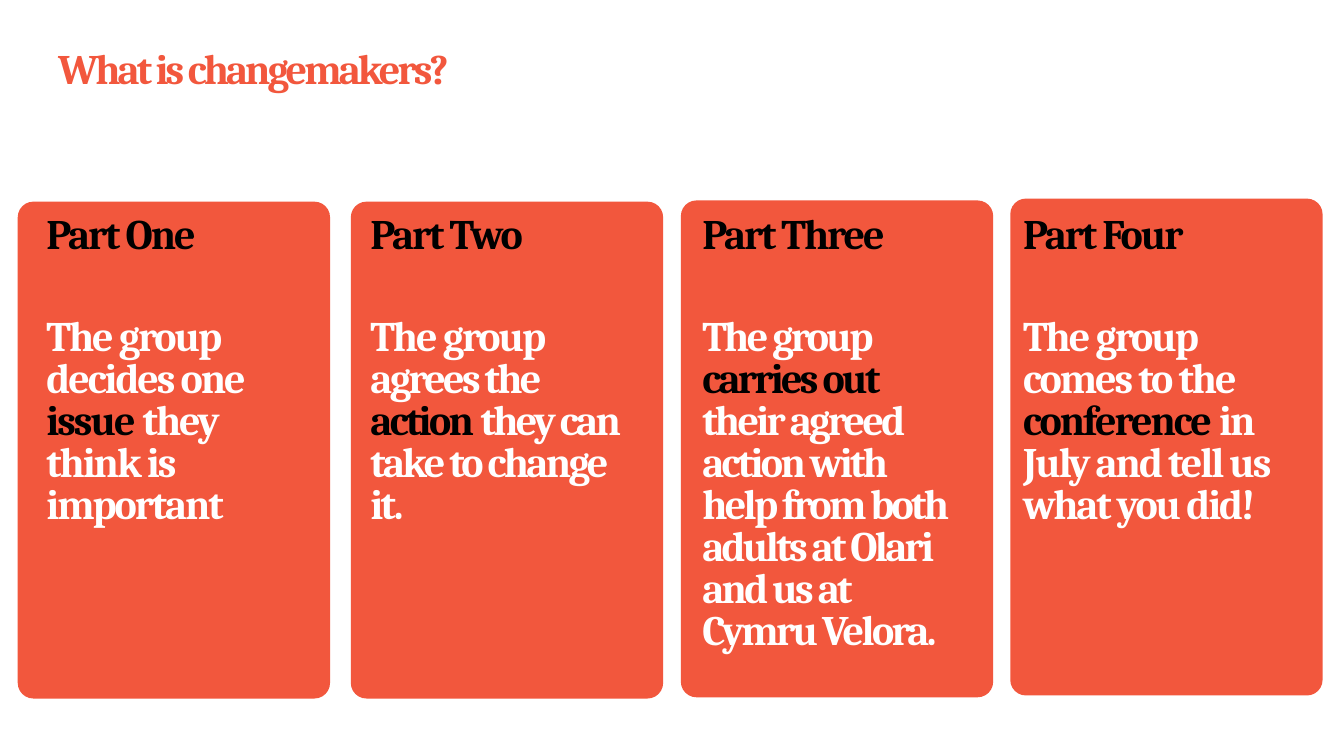
from pptx import Presentation
from pptx.dml.color import RGBColor
from pptx.enum.shapes import MSO_SHAPE
from pptx.util import Pt

PX = 9144
CORAL = RGBColor(0xF2, 0x57, 0x3D)
BLACK = RGBColor(0, 0, 0)
WHITE = RGBColor(255, 255, 255)
SIZE = Pt(49.5)
GAP = Pt(71.1)
CARD_W, CARD_H = 511, 813
TEXT_TOP, TEXT_W = 338, 418

PARTS = [
    ((29, 330), (47, 537), "Part One", [
        ("The group decides one ", WHITE, -240),
        ("issue", BLACK, -240),
        (" they think is important", WHITE, -240)]),
    ((574, 330), (32, 622), "Part Two", [
        ("The group ", WHITE, -240),
        ("agrees the ", WHITE, -310),
        ("action", BLACK, -310),
        (" they can take to change it.", WHITE, -310)]),
    ((1114, 328), (35, 747), "Part Three", [
        ("The group ", WHITE, -310),
        ("carries out ", BLACK, -310),
        ("their agreed action with help from both adults at Olari "
         "and us at Cymru Velora.", WHITE, -310)]),
    ((1653, 325), (21, 537), "Part Four", [
        ("The group comes to the ", WHITE, -240),
        ("conference", BLACK, -240),
        (" in July and tell us what you did!", WHITE, -240)]),
]


def scale(*box):
    return [n * PX for n in box]


def add_text(slide, box, paras):
    frame = slide.shapes.add_textbox(*scale(*box)).text_frame
    frame.word_wrap = True
    frame.margin_left = frame.margin_right = frame.margin_bottom = 0
    frame.margin_top = 15 * PX
    for i, runs in enumerate(paras):
        para = frame.add_paragraph() if i else frame.paragraphs[0]
        para.line_spacing = SIZE
        if i:
            para.space_before = GAP
        for text, color, track in runs:
            run = para.add_run()
            run.text = text
            font = run.font
            font.name, font.size, font.bold = "Cambria", SIZE, True
            font.color.rgb = color
            run._r.get_or_add_rPr().set("spc", str(track))


def add_title(slide, box):
    add_text(slide, box, [[("What is changemakers?", CORAL, -340)]])


def add_card(slide, box, inset, depth, head, body):
    card = slide.shapes.add_shape(MSO_SHAPE.ROUNDED_RECTANGLE, *scale(*box))
    card.adjustments[0] = 0.05
    card.shadow.inherit = False
    card.fill.solid()
    card.fill.fore_color.rgb = CORAL
    card.line.fill.background()
    add_text(slide, (box[0] + inset, TEXT_TOP, TEXT_W, depth),
             [[(head, BLACK, -240)], body])


def main():
    deck = Presentation()
    deck.slide_width, deck.slide_height = scale(2199, 1237)
    slide = deck.slides.add_slide(deck.slide_layouts[6])
    add_title(slide, (95, 69, 791, 85))
    for (left, top), (inset, depth), head, body in PARTS:
        add_card(slide, (left, top, CARD_W, CARD_H), inset, depth, head, body)
    deck.save("out.pptx")


if __name__ == "__main__":
    main()
